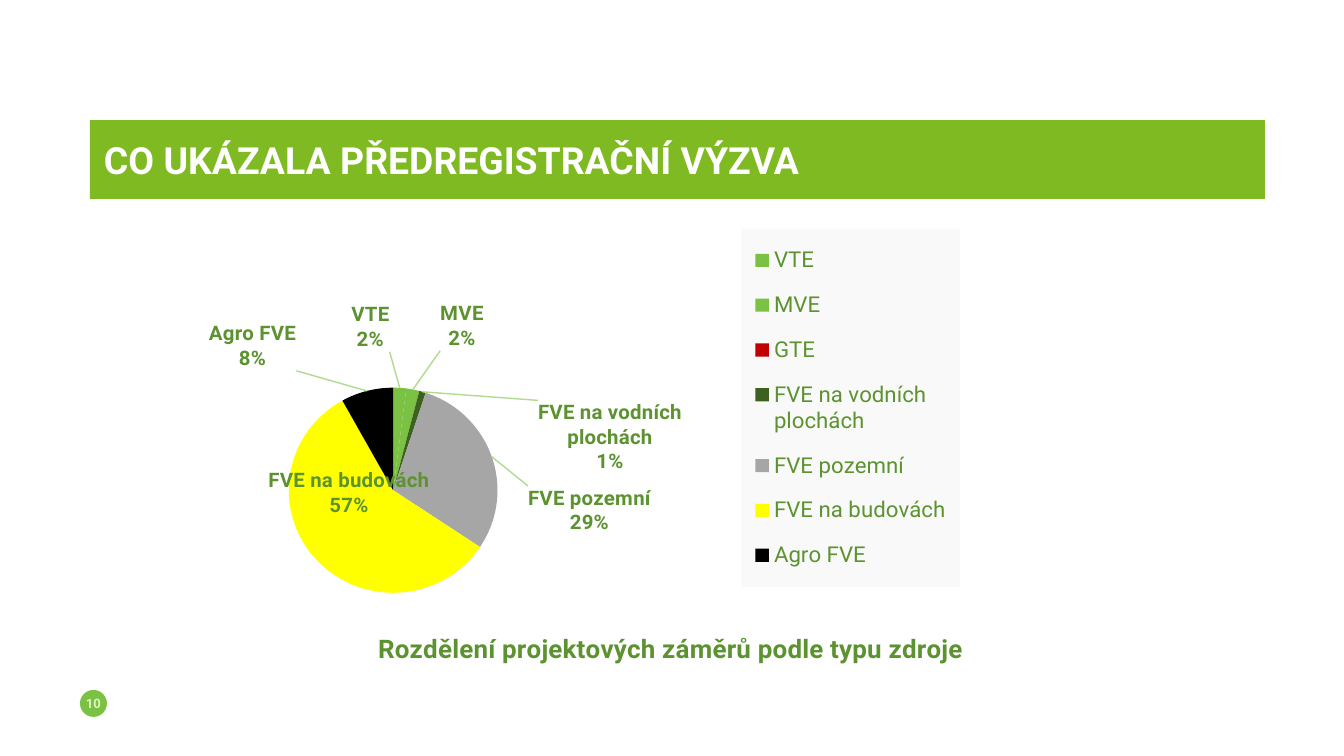
from lxml import etree
from pptx import Presentation, util as u
from pptx.chart.data import CategoryChartData
from pptx.dml.color import RGBColor
from pptx.enum import chart as ch, shapes, text
from pptx.oxml import parse_xml
from pptx.oxml.ns import nsdecls, qn

PX = 914400 / 134.4
FONT = "Roboto"
COLORS = {
    "white": "FFFFFF", "banner": "7FBA22", "badge": "7BC143", "number": "DFF5C0",
    "ink": "5C9330", "panel": "F9F9F9", "leader": "B0DA8E",
}
# name, percent, colour, label shift in px from its place at the slice's edge
SOURCES = [
    ("VTE", 2, "7BC143", (-30, -29)),
    ("MVE", 2, "7BC143", (26, -32)),
    ("GTE", 0, "C00000", (128, -6)),
    ("FVE na vodních plochách", 1, "3D6220", (114, 92)),
    ("FVE pozemní", 29, "A6A6A6", (29, 83)),
    ("FVE na budovách", 57, "FFFF00", (120, -99)),
    ("Agro FVE", 8, "000000", (-69, -13)),
]


def px(n):
    return u.Emu(round(n * PX))


def rgb(name):
    return RGBColor.from_string(COLORS.get(name, name))


def style(font, size, color, bold=False):
    font.name, font.size, font.bold = FONT, u.Pt(size), bold
    font.color.rgb = rgb(color)


def add_filled(slide, preset, box, fill, words, size, color, align, inset=0):
    shape = slide.shapes.add_shape(preset, *map(px, box))
    shape.shadow.inherit = False
    shape.fill.solid()
    shape.fill.fore_color.rgb = rgb(fill)
    shape.line.fill.background()
    frame = shape.text_frame
    frame.word_wrap = False
    frame.vertical_anchor = text.MSO_ANCHOR.MIDDLE
    frame.margin_left = px(inset)
    frame.margin_right = frame.margin_top = frame.margin_bottom = 0
    paragraph = frame.paragraphs[0]
    paragraph.alignment = align
    run = paragraph.add_run()
    run.text = words
    style(run.font, size, color, True)


def layout_xml(chart_box, x, y, size=None, edge=True, inner=False):
    """Manual layout; x, y and size are px inside the chart box."""
    width, height = chart_box[2:]
    parts = ['<c:layoutTarget val="inner"/>'] if inner else []
    if edge:
        parts += ['<c:xMode val="edge"/>', '<c:yMode val="edge"/>']
    values = [("x", x / width), ("y", y / height)]
    if size:
        values += [("w", size[0] / width), ("h", size[1] / height)]
    parts += [f'<c:{tag} val="{value:.4f}"/>' for tag, value in values]
    return parse_xml(f'<c:layout {nsdecls("c")}><c:manualLayout>{"".join(parts)}'
                     '</c:manualLayout></c:layout>')


def place(element, layout, after):
    for old in element.findall(qn("c:layout")):
        element.remove(old)
    if after is None:
        element.insert(0, layout)
    else:
        element.find(qn(after)).addnext(layout)


def add_labels(plot, box):
    series = plot.series[0]
    for i, (name, value, color, shift) in enumerate(SOURCES):
        point = series.points[i]
        point.format.fill.solid()
        point.format.fill.fore_color.rgb = rgb(color)
        point.format.line.fill.background()
        label = point.data_label
        style(label.font, 11, "ink", True)
        label.position = ch.XL_LABEL_POSITION.OUTSIDE_END
    labels = series.data_labels
    style(labels.font, 11, "ink", True)
    labels.number_format, labels.number_format_is_linked = '0"%"', False
    labels.show_value = labels.show_category_name = True
    group = series._element.find(qn("c:dLbls"))
    for item, source in zip(group.findall(qn("c:dLbl")), SOURCES):
        place(item, layout_xml(box, *source[3], edge=False), "c:idx")
        item.find(qn("c:layout")).addnext(parse_xml(
            f'<c:numFmt {nsdecls("c")} formatCode="0&quot;%&quot;" sourceLinked="0"/>'))
        item.find(qn("c:showCatName")).set("val", "1")
        etree.SubElement(item, qn("c:separator")).text = "\n"
    for old in group.findall(qn("c:showLeaderLines")):
        group.remove(old)
    etree.SubElement(group, qn("c:separator")).text = "\n"
    etree.SubElement(group, qn("c:showLeaderLines")).set("val", "1")
    group.append(parse_xml(
        f'<c:leaderLines {nsdecls("c", "a")}><c:spPr><a:ln w="9525"><a:solidFill>'
        f'<a:srgbClr val="{COLORS["leader"]}"/></a:solidFill></a:ln></c:spPr></c:leaderLines>'))


def add_source_chart(slide, box):
    data = CategoryChartData(number_format='0"%"')
    data.categories = [source[0] for source in SOURCES]
    data.add_series("Series 1", [source[1] for source in SOURCES])
    chart = slide.shapes.add_chart(ch.XL_CHART_TYPE.PIE, *map(px, box), data).chart
    style(chart.font, 10, "badge")
    plot = chart.plots[0]
    plot.vary_by_categories = True
    add_labels(plot, box)
    place(chart._chartSpace.chart.plotArea,
          layout_xml(box, 200, 184, (210, 210), inner=True), None)

    chart.has_title = True
    caption = chart.chart_title.text_frame.paragraphs[0].add_run()
    caption.text = "Rozdělení projektových záměrů podle typu zdroje"
    style(caption.font, 14, "ink", True)
    chart.chart_title.include_in_layout = False
    place(chart.chart_title._element, layout_xml(box, 285, 428), "c:tx")

    chart.has_legend = True
    legend = chart.legend
    legend.position = ch.XL_LEGEND_POSITION.RIGHT
    legend.include_in_layout = False
    style(legend.font, 12, "ink")
    place(legend._element, layout_xml(box, 655, 21, (220, 367)), "c:legendPos")
    legend._element.find(qn("c:overlay")).addnext(parse_xml(
        f'<c:spPr {nsdecls("c", "a")}><a:solidFill><a:srgbClr val="{COLORS["panel"]}"/>'
        '</a:solidFill><a:ln><a:noFill/></a:ln></c:spPr>'))


def main():
    deck = Presentation()
    deck.slide_width, deck.slide_height = px(1344), px(756)
    slide = deck.slides.add_slide(deck.slide_layouts[6])
    add_filled(slide, shapes.MSO_SHAPE.OVAL, (80, 690, 27, 27), "badge",
               "10", 7, "number", text.PP_ALIGN.CENTER)
    add_filled(slide, shapes.MSO_SHAPE.RECTANGLE, (90, 120, 1175, 79), "banner",
               "CO UKÁZALA PŘEDREGISTRAČNÍ VÝZVA", 20, "white", text.PP_ALIGN.LEFT, 14)
    add_source_chart(slide, (90, 208, 879, 465))
    deck.save("out.pptx")


if __name__ == "__main__":
    main()
